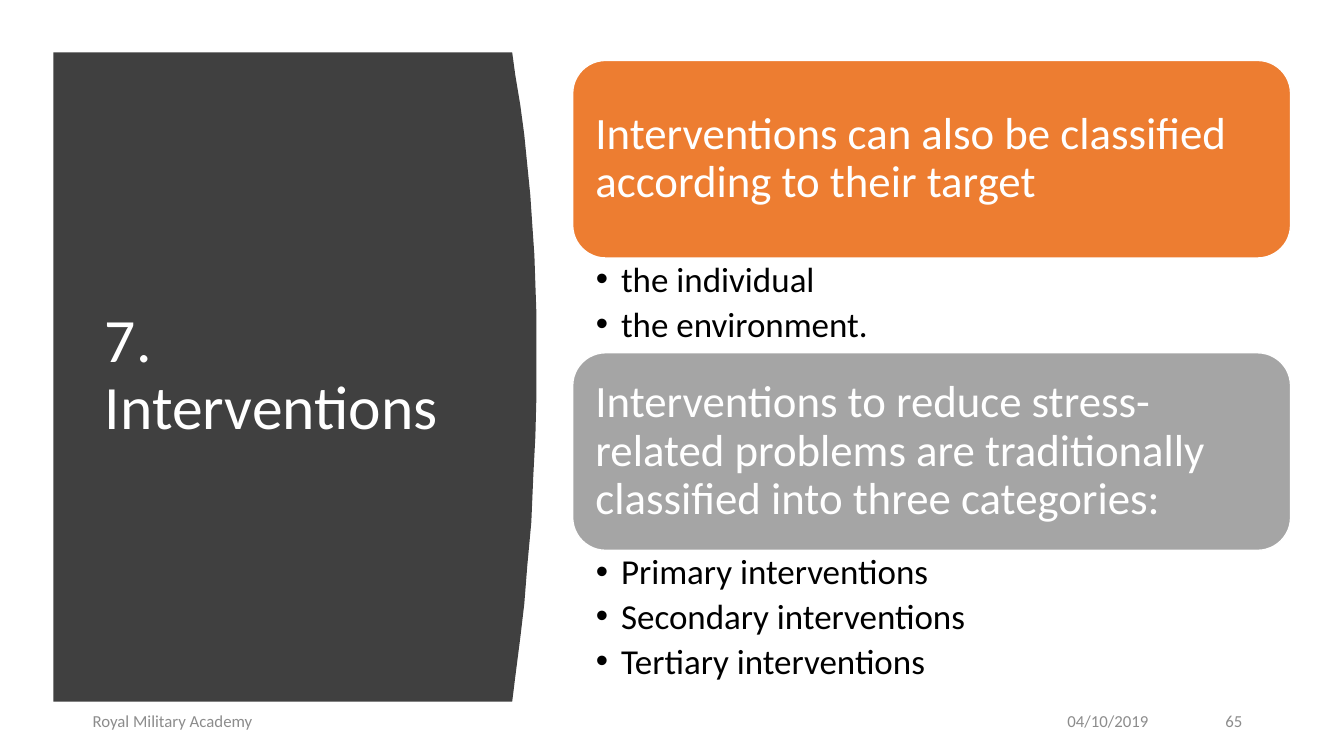
from lxml.etree import SubElement
from pptx import Presentation
from pptx.dml.color import RGBColor
from pptx.enum.shapes import MSO_SHAPE
from pptx.enum.text import MSO_ANCHOR, MSO_AUTO_SIZE, PP_ALIGN
from pptx.oxml.ns import qn
from pptx.util import Pt

SCALE = 9144
CURVE = [(508, 52), (511, 74), (516, 104), (520, 134), (523, 164), (526, 194),
         (528, 224), (530, 253), (531, 282), (532, 311), (532, 353), (532, 394),
         (531, 433), (529, 471), (527, 518), (523, 561), (520, 599), (516, 633),
         (511, 672), (508, 696)]
CARDS = [
    ("Interventions can also be classified according to their target", "ED7D31",
     ["the individual", "the environment."], 94),
    ("Interventions to reduce stress-related problems are traditionally "
     "classified into three categories:", "A5A5A5",
     ["Primary interventions", "Secondary interventions",
      "Tertiary interventions"], 141),
]
FOOTER = [("Royal Military Academy", 82, 450, PP_ALIGN.LEFT),
          ("04/10/2019", 849, 300, PP_ALIGN.RIGHT),
          ("65", 1173, 69, PP_ALIGN.RIGHT)]


def px(num):
    return num * SCALE


def paint(target, color):
    if hasattr(target, "solid"):
        target.solid()
        target = target.fore_color
    target.rgb = RGBColor.from_string(color)


def place(shape, box):
    shape.left, shape.top, shape.width, shape.height = map(px, box)


def write(shape, lines, size, color, align=PP_ALIGN.LEFT,
          anchor=MSO_ANCHOR.MIDDLE, inset=(10, 5, 10, 5),
          leading=1.0, after=0, bullet=None):
    frame = shape.text_frame
    frame.word_wrap = True
    frame.auto_size = MSO_AUTO_SIZE.NONE
    frame.vertical_anchor = anchor
    (frame.margin_left, frame.margin_top,
     frame.margin_right, frame.margin_bottom) = map(px, inset)
    for index, line in enumerate(lines):
        para = frame.add_paragraph() if index else frame.paragraphs[0]
        para.alignment = align
        para.line_spacing = leading
        para.space_before = Pt(0)
        para.space_after = Pt(after)
        run = para.add_run()
        run.text = line
        run.font.name = "Calibri"
        run.font.size = Pt(size)
        paint(run.font.color, color)
        if bullet:
            props = para._p.get_or_add_pPr()
            props.set("marL", str(px(25)))
            props.set("indent", str(px(-25)))
            SubElement(props, qn("a:buChar")).set("char", bullet)


def add_panel(slide, box):
    left, top, width, height = box
    pen = slide.shapes.build_freeform(px(left), px(top), scale=1.0)
    pen.add_line_segments([(px(x), px(y)) for x, y in CURVE] +
                          [(px(left), px(top + height))], close=True)
    panel = pen.convert_to_shape()
    panel.shadow.inherit = False
    paint(panel.fill, "404040")
    panel.line.fill.background()
    slide.shapes._spTree.insert(2, panel._element)
    title = slide.shapes.title
    place(title, (left + 41, top + 59, width - 105, height - 120))
    write(title, ["7. Interventions"], 44, "FFFFFF", leading=0.9)


def add_cards(slide, box):
    left, top, width, tall = box
    bodies = list(slide.placeholders)[1:]
    for (head, color, items, depth), body in zip(CARDS, bodies):
        card = slide.shapes.add_shape(MSO_SHAPE.ROUNDED_RECTANGLE,
                                      px(left), px(top), px(width), px(tall))
        card.shadow.inherit = False
        paint(card.fill, color)
        paint(card.line.fill, "FFFFFF")
        card.line.width = Pt(1)
        write(card, [head], 32, "FFFFFF", inset=(13, 13, 13, 13),
              leading=0.9, after=11)
        top += tall
        place(body, (left, top, width, depth))
        write(body, items, 25, "000000", anchor=MSO_ANCHOR.TOP,
              inset=(23, 4, 25, 4), leading=0.9, after=5, bullet="•")
        top += depth


def add_footer(slide, top, height):
    for text, left, width, align in FOOTER:
        note = slide.shapes.add_textbox(px(left), px(top), px(width), px(height))
        write(note, [text], 12, "8C8C8C", align=align, after=6)


def main():
    deck = Presentation()
    deck.slide_width, deck.slide_height = px(1333), px(750)
    slide = deck.slides.add_slide(deck.slide_layouts.get_by_name("Two Content"))
    add_panel(slide, (53, 52, 479, 644))
    add_cards(slide, (568, 60, 712, 196))
    add_footer(slide, 695, 40)
    deck.save("out.pptx")


if __name__ == "__main__":
    main()
